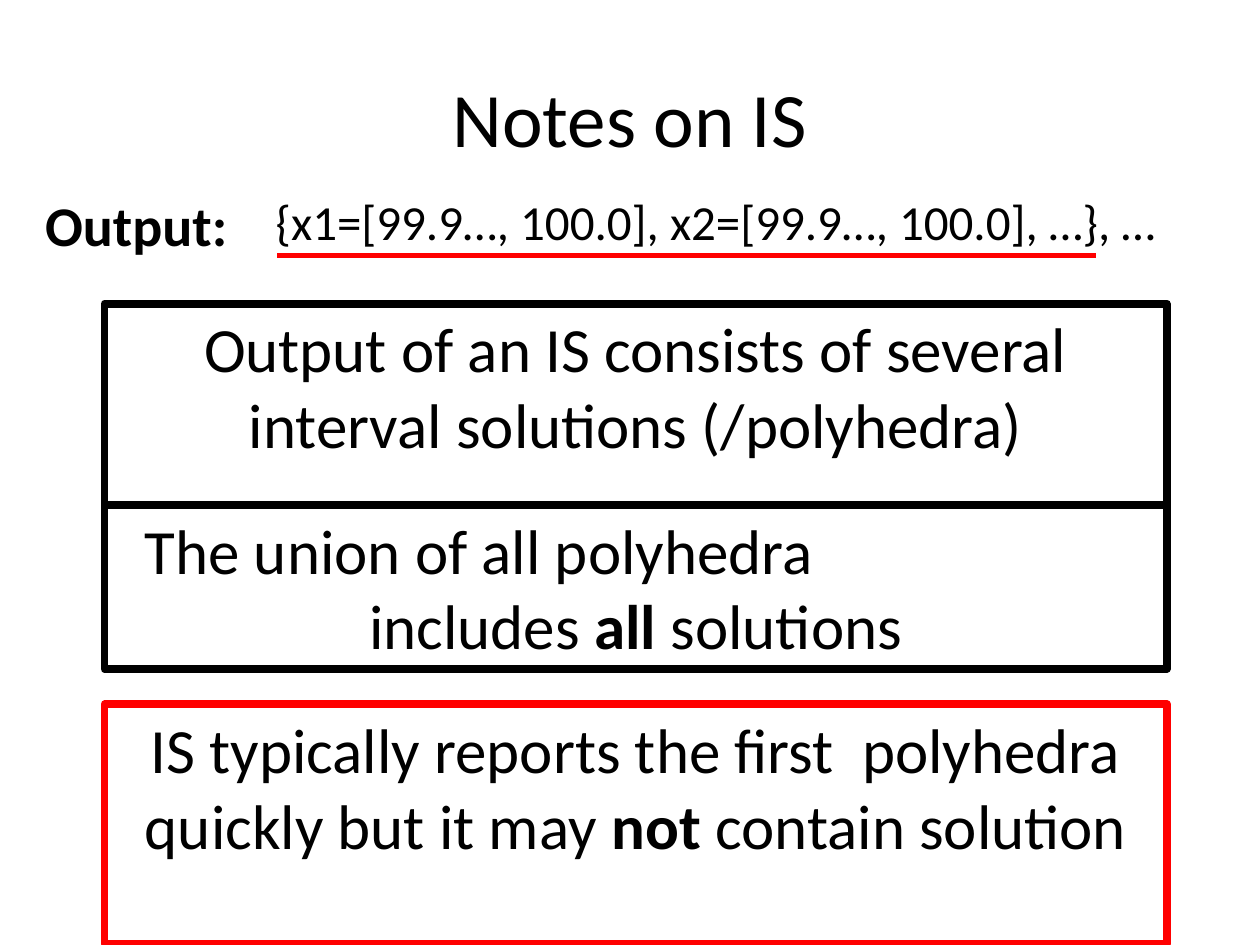
from pptx import Presentation
from pptx.dml.color import RGBColor
from pptx.enum.shapes import MSO_CONNECTOR, MSO_SHAPE
from pptx.enum.text import MSO_ANCHOR, PP_ALIGN
from pptx.oxml.ns import qn
from pptx.util import Inches, Pt
from lxml import etree

LEFT, CENTER = PP_ALIGN.LEFT, PP_ALIGN.CENTER
TOP, MIDDLE = MSO_ANCHOR.TOP, MSO_ANCHOR.MIDDLE

THEME = {
    "font": "Calibri",
    "black": RGBColor(0, 0, 0),
    "white": RGBColor(255, 255, 255),
    "red": RGBColor(255, 0, 0),
    "title": 44, "note": 36, "label": 32, "output": 28,
    "border": 4.5, "underline": 3,
}

presentation = Presentation()
presentation.slide_width, presentation.slide_height = Inches(10), Inches(7.5)
slide = presentation.slides.add_slide(presentation.slide_layouts[6])


def write(shape, paragraphs, size, anchor=TOP):
    """Fill a shape with (alignment, indent, [(text, bold), ...]) paragraphs."""
    frame = shape.text_frame
    frame.word_wrap = True
    frame.vertical_anchor = anchor
    for index, (alignment, indent, runs) in enumerate(paragraphs):
        paragraph = frame.add_paragraph() if index else frame.paragraphs[0]
        paragraph.alignment = alignment
        if indent:
            paragraph._p.get_or_add_pPr().set("marL", str(Inches(indent)))
        paragraph.font.name = THEME["font"]
        paragraph.font.size = Pt(size)
        paragraph.font.color.rgb = THEME["black"]
        for text, bold in runs:
            run = paragraph.add_run()
            run.text = text
            run.font.bold = bold


# Notes in boxes: top, height, border colour, paragraphs
notes = [
    (2.41, 1.9, "black", [(CENTER, 0, [
        ("Output of an IS consists of several interval solutions (/polyhedra)", False)])]),
    (4.01, 1.3, "black", [
        (LEFT, 0.22, [("The union of all polyhedra", False)]),
        (CENTER, 0, [("includes ", False), ("all", True), (" solutions", False)])]),
    (5.59, 1.9, "red", [(CENTER, 0, [
        ("IS typically reports the first  polyhedra quickly but it may ", False),
        ("not", True), (" contain solution", False)])]),
]
for top, height, border, paragraphs in notes:
    box = slide.shapes.add_shape(
        MSO_SHAPE.RECTANGLE, Inches(0.83), Inches(top), Inches(8.43), Inches(height))
    box.shadow.inherit = False
    box.fill.solid()
    box.fill.fore_color.rgb = THEME["white"]
    box.line.color.rgb = THEME[border]
    box.line.width = Pt(THEME["border"])
    write(box, paragraphs, THEME["note"])

# Title, output label and sample output: place, text, size, look
texts = [
    ((0.5, 0.3, 9, 1.25), "Notes on IS", "title", CENTER, MIDDLE, False),
    ((2.09, 1.47, 8.5, 1.02), "{x1=[99.9…, 100.0], x2=[99.9…, 100.0], …}, …",
     "output", LEFT, TOP, False),
    ((0.26, 1.46, 2.27, 0.63), "Output:", "label", LEFT, TOP, True),
]
for place, text, size, alignment, anchor, bold in texts:
    text_box = slide.shapes.add_textbox(*map(Inches, place))
    write(text_box, [(alignment, 0, [(text, bold)])], THEME[size], anchor)

# Red underline below the first interval solution
underline = slide.shapes.add_connector(
    MSO_CONNECTOR.STRAIGHT, Inches(2.2), Inches(2.03), Inches(8.7), Inches(2.03))
underline.line.color.rgb = THEME["red"]
underline.line.width = Pt(THEME["underline"])
etree.SubElement(underline._element.spPr, qn("a:effectLst"))

presentation.save("out.pptx")
